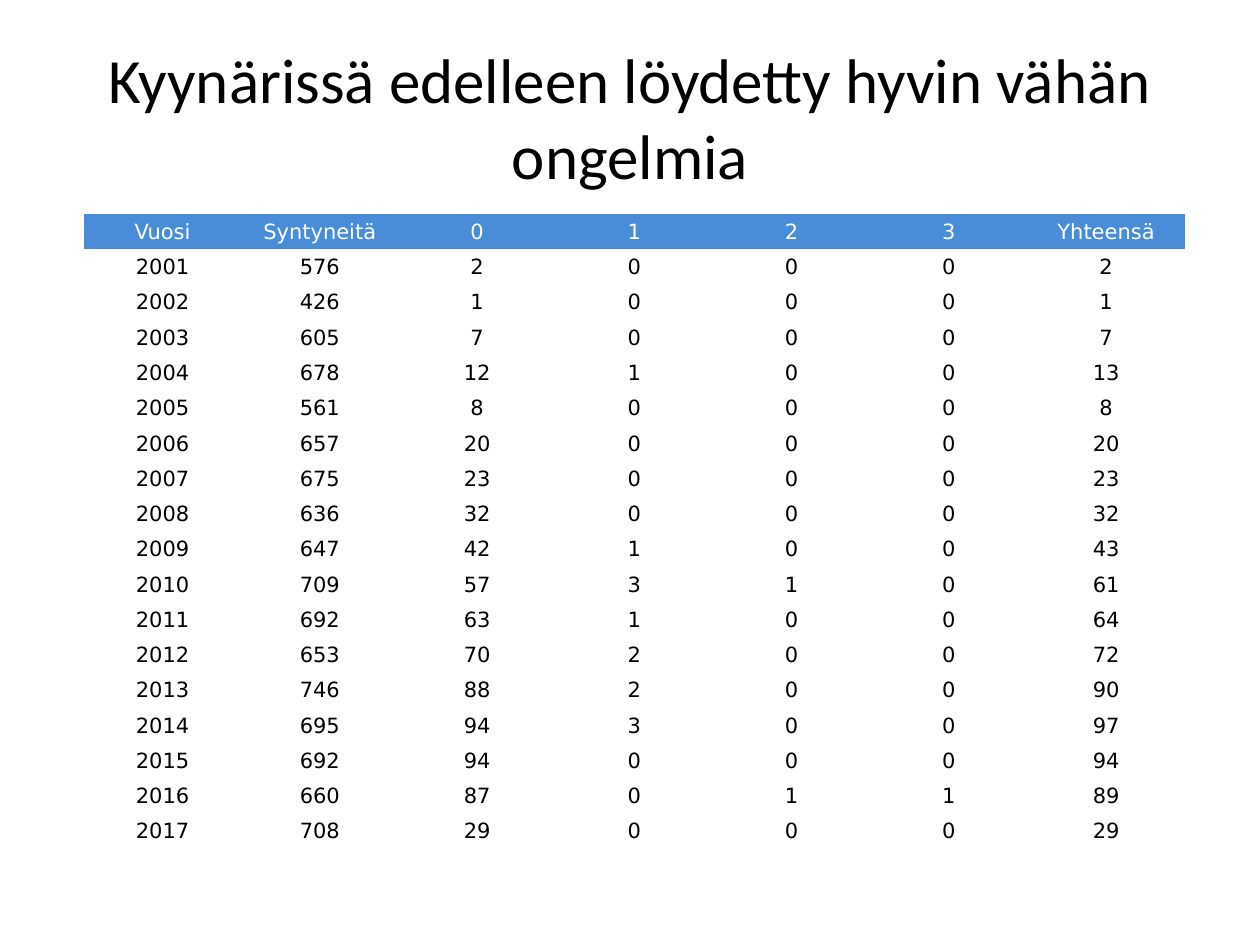
from pptx import Presentation
from pptx.dml.color import RGBColor
from pptx.enum.text import MSO_ANCHOR, PP_ALIGN
from pptx.oxml.ns import qn
from pptx.util import Pt

PX = 914400 // 126
MIDDLE, CENTER = MSO_ANCHOR.MIDDLE, PP_ALIGN.CENTER
NO_STYLE = "{2D5ABB26-0587-4C30-8999-92F81FD0307C}"
BLUE, WHITE, BLACK = "498CD8", "FFFFFF", "000000"

TITLE = "Kyynärissä edelleen löydetty hyvin vähän ongelmia"
HEADER = ("Vuosi", "Syntyneitä", "0", "1", "2", "3", "Yhteensä")
ROWS = [
    (2001, 576, 2, 0, 0, 0, 2),
    (2002, 426, 1, 0, 0, 0, 1),
    (2003, 605, 7, 0, 0, 0, 7),
    (2004, 678, 12, 1, 0, 0, 13),
    (2005, 561, 8, 0, 0, 0, 8),
    (2006, 657, 20, 0, 0, 0, 20),
    (2007, 675, 23, 0, 0, 0, 23),
    (2008, 636, 32, 0, 0, 0, 32),
    (2009, 647, 42, 1, 0, 0, 43),
    (2010, 709, 57, 3, 1, 0, 61),
    (2011, 692, 63, 1, 0, 0, 64),
    (2012, 653, 70, 2, 0, 0, 72),
    (2013, 746, 88, 2, 0, 0, 90),
    (2014, 695, 94, 3, 0, 0, 97),
    (2015, 692, 94, 0, 0, 0, 94),
    (2016, 660, 87, 0, 1, 1, 89),
    (2017, 708, 29, 0, 0, 0, 29),
]
TITLE_BOX = (63, 38, 1134, 157)
TABLE_BOX = (84, 214, 1101, 635)


def emu(*lengths):
    return [n * PX for n in lengths]


def rgb(color):
    return RGBColor.from_string(color)


def put_text(tf, text, size=12, font="DejaVu Sans", color=BLACK):
    tf.word_wrap = True
    p = tf.paragraphs[0]
    p.alignment = CENTER
    r = p.add_run()
    r.text = str(text)
    r.font.size = Pt(size)
    r.font.name = font
    r.font.bold = False
    r.font.color.rgb = rgb(color)


def add_title(s):
    tf = s.shapes.add_textbox(*emu(*TITLE_BOX)).text_frame
    tf.vertical_anchor = MIDDLE
    put_text(tf, TITLE, size=36, font="Calibri")


def add_births_table(s):
    rows = [HEADER, *ROWS]
    table = s.shapes.add_table(len(rows), len(HEADER), *emu(*TABLE_BOX)).table
    table.horz_banding = False
    table._tbl.tblPr.find(qn("a:tableStyleId")).text = NO_STYLE
    for i, row in enumerate(rows):
        fill, color = (WHITE, BLACK) if i else (BLUE, WHITE)
        for j, value in enumerate(row):
            cell = table.cell(i, j)
            cell.margin_left = cell.margin_right = cell.margin_top = PX
            cell.margin_bottom = 0
            cell.vertical_anchor = MIDDLE
            cell.fill.solid()
            cell.fill.fore_color.rgb = rgb(fill)
            put_text(cell.text_frame, value, color=color)


def main():
    """Build the slide with yearly elbow findings."""
    prs = Presentation()
    prs.slide_width, prs.slide_height = emu(1260, 945)
    s = prs.slides.add_slide(prs.slide_layouts[6])
    add_title(s)
    add_births_table(s)
    prs.save("out.pptx")


if __name__ == "__main__":
    main()
